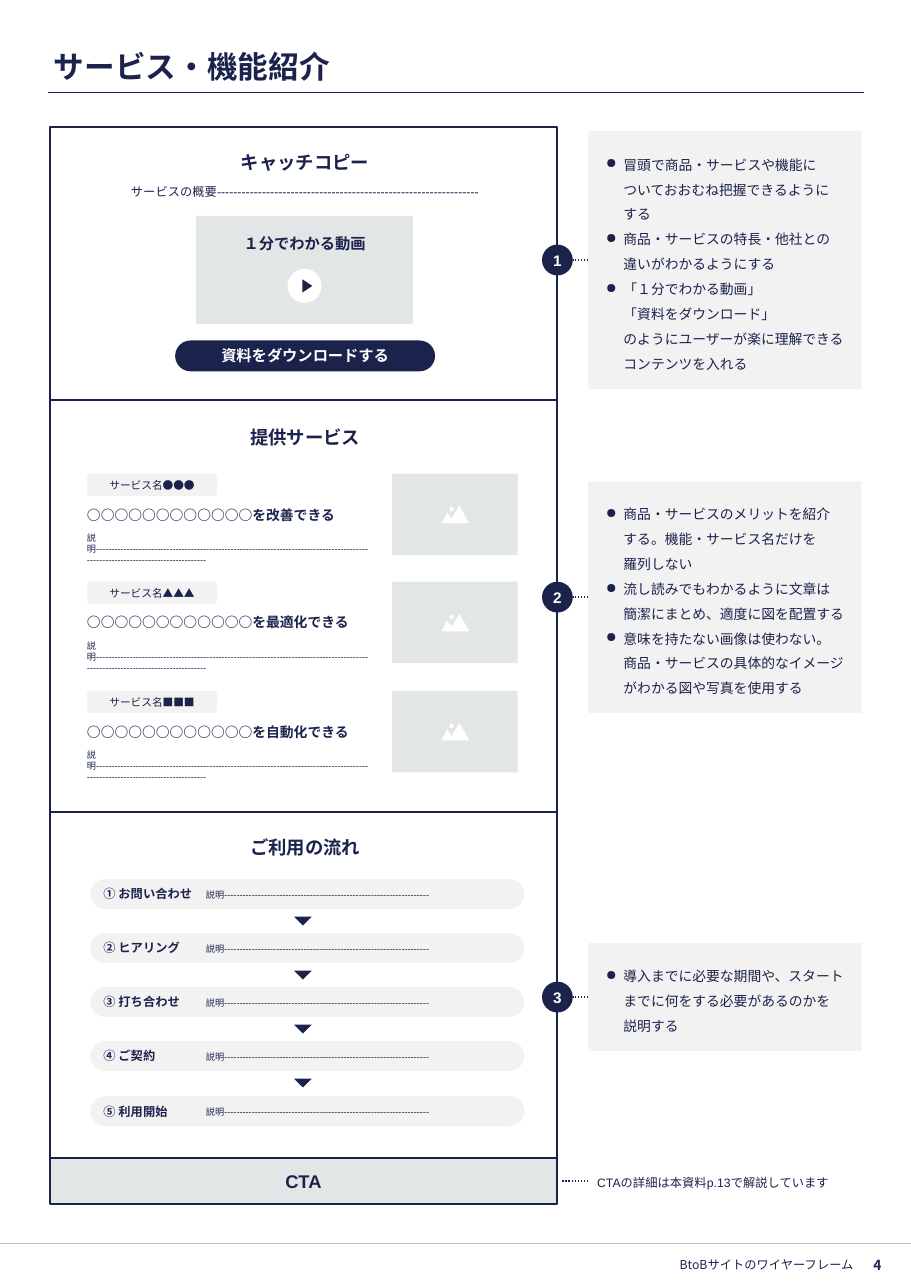
from copy import deepcopy

from lxml import etree
from pptx import Presentation
from pptx.dml.color import RGBColor
from pptx.enum.dml import MSO_LINE
from pptx.enum.shapes import MSO_CONNECTOR, MSO_SHAPE
from pptx.enum.text import MSO_ANCHOR, PP_ALIGN
from pptx.oxml.ns import qn
from pptx.util import Pt

RECT, PILL = MSO_SHAPE.RECTANGLE, MSO_SHAPE.ROUNDED_RECTANGLE
OVAL, TRIANGLE = MSO_SHAPE.OVAL, MSO_SHAPE.ISOSCELES_TRIANGLE
LEFT, CENTER, RIGHT = PP_ALIGN.LEFT, PP_ALIGN.CENTER, PP_ALIGN.RIGHT
TOP, MIDDLE = MSO_ANCHOR.TOP, MSO_ANCHOR.MIDDLE
STRAIGHT, DOTTED = MSO_CONNECTOR.STRAIGHT, MSO_LINE.ROUND_DOT

SCALE = 9144  # EMU per px, 100 px to the inch


class Theme:
    navy = RGBColor(0x1B, 0x22, 0x4C)
    white = RGBColor(0xFF, 0xFF, 0xFF)
    pale = RGBColor(0xF2, 0xF2, 0xF2)
    gray = RGBColor(0xE2, 0xE6, 0xE6)
    rule = RGBColor(0xBF, 0xBF, 0xBF)
    latin, japanese = "Arial", "Noto Sans CJK JP"
    title, heading, accent, body, small, label, detail = 20, 12, 10, 9, 8, 7, 6


presentation = Presentation()
presentation.slide_width, presentation.slide_height = 827 * SCALE, 1169 * SCALE
slide = presentation.slides.add_slide(presentation.slide_layouts[6])
shapes = slide.shapes


def add_box(kind, left, top, width, height, fill=None, outline=None):
    """Add a preset shape, or a text box when kind is None."""
    place = [length * SCALE for length in (left, top, width, height)]
    if kind is None:
        return shapes.add_textbox(*place)
    shape = shapes.add_shape(kind, *place)
    shape.shadow.inherit = False
    if fill is None:
        shape.fill.background()
    else:
        shape.fill.solid()
        shape.fill.fore_color.rgb = fill
    if outline is None:
        shape.line.fill.background()
    else:
        shape.line.color.rgb = outline
        shape.line.width = Pt(1.25)
    return shape


def write(shape, text, size, bold=False, color=Theme.navy, align=LEFT, anchor=MIDDLE,
          inset=(0, 0), latin=Theme.latin, bullets=False):
    """Fill the shape with text; inset is (sides, top and bottom)."""
    frame = shape.text_frame
    frame.text = text
    frame.word_wrap = True
    frame.vertical_anchor = anchor
    frame.margin_left = frame.margin_right = inset[0] * SCALE
    frame.margin_top = frame.margin_bottom = inset[1] * SCALE
    for paragraph in frame.paragraphs:
        paragraph.alignment = align
        if bullets:
            properties = paragraph._p.get_or_add_pPr()
            properties.set("marL", str(16 * SCALE))
            properties.set("indent", str(-16 * SCALE))
            bullet_color = etree.SubElement(properties, qn("a:buClr"))
            etree.SubElement(bullet_color, qn("a:srgbClr"), val=str(Theme.navy))
            etree.SubElement(properties, qn("a:buChar"), char="●")
            paragraph.line_spacing = 1.5
        for run in paragraph.runs:
            run.font.size = Pt(size)
            run.font.bold = bold
            run.font.color.rgb = color
            run.font.name = latin
            run_properties = run._r.get_or_add_rPr()
            etree.SubElement(run_properties, qn("a:ea"), typeface=Theme.japanese)
        for line_break in paragraph._p.findall(qn("a:br")):
            line_break.append(deepcopy(run_properties))


# Title and footer
write(add_box(None, 45, 39, 736, 42), "サービス・機能紹介", Theme.title, True, inset=(4, 4))
write(add_box(None, 500, 1138, 279, 20), "BtoBサイトのワイヤーフレーム", Theme.small,
      align=RIGHT, inset=(4, 4), latin=Theme.japanese)
write(add_box(None, 781, 1138, 31, 20), "4", Theme.body, True, align=CENTER,
      inset=(4, 4), latin=Theme.japanese)

# Page sections
sections = [(115, 248, 137, "キャッチコピー"), (363, 374, 387, "提供サービス"),
            (737, 314, 759, "ご利用の流れ")]
for top, height, heading_top, heading in sections:
    add_box(RECT, 45, top, 461, height, outline=Theme.navy)
    write(add_box(None, 80, heading_top, 394, 20), heading, Theme.heading, True,
          align=CENTER, anchor=TOP)
cta = add_box(RECT, 45, 1051, 461, 42, Theme.gray, Theme.navy)
write(cta, "CTA", Theme.heading, True, align=CENTER)

# Catch copy with video and download button
write(add_box(None, 80, 167, 394, 16), "サービスの概要" + "-" * 64, Theme.small,
      align=CENTER, anchor=TOP)
write(add_box(RECT, 178, 196, 197, 98, Theme.gray), "１分でわかる動画", Theme.accent, True,
      align=CENTER, anchor=TOP, inset=(16, 17))
add_box(OVAL, 261, 244, 31, 31, Theme.white)
add_box(TRIANGLE, 273, 255, 12, 9, Theme.navy).rotation = 90
button = add_box(PILL, 159, 309, 236, 28, Theme.navy)
button.adjustments[0] = 0.5
write(button, "資料をダウンロードする", Theme.accent, True, Theme.white, CENTER, inset=(0, 4))

# Offered services
services = [("●●●", "改善"), ("▲▲▲", "最適化"), ("■■■", "自動化")]
for index, (mark, benefit) in enumerate(services):
    top = 430 + 197 * index // 2
    write(add_box(PILL, 79, top, 118, 20, Theme.pale), "サービス名" + mark, Theme.label,
          align=CENTER, inset=(4, 4))
    write(add_box(None, 79, top + 29, 256, 16), "○" * 12 + f"を{benefit}できる",
          Theme.body, True)
    write(add_box(None, 79, top + 53, 256, 20), "説明" + "-" * 128, Theme.detail, anchor=TOP)
    add_box(RECT, 356, top, 114, 74, Theme.gray)
    add_box(OVAL, 408, top + 30, 4, 4, Theme.white)
    outline = shapes.build_freeform(417, top + 29, scale=SCALE)
    outline.add_line_segments([(426, top + 45), (401, top + 45), (406, top + 35),
                               (410, top + 41)])
    mountain = outline.convert_to_shape()
    mountain.shadow.inherit = False
    mountain.fill.solid()
    mountain.fill.fore_color.rgb = Theme.white
    mountain.line.fill.background()

# Steps of use
steps = ["① お問い合わせ", "② ヒアリング", "③ 打ち合わせ", "④ ご契約", "⑤ 利用開始"]
for index, step in enumerate(steps):
    top = 798 + 197 * index // 4
    bar = add_box(PILL, 82, top, 394, 27, Theme.pale)
    bar.adjustments[0] = 0.5
    write(bar, step, Theme.small, True, inset=(8, 4))
    write(add_box(None, 187, top + 8, 276, 12), "説明" + "-" * 67, Theme.detail)
    if index < len(steps) - 1:
        add_box(TRIANGLE, 267, top + 34, 16, 8, Theme.navy).rotation = 180

# Lines: start, end, colour, width, dash, object at the start
lines = [((44, 84), (784, 84), Theme.navy, 1, None, None),
         ((0, 1129), (827, 1129), Theme.rule, 0.5, None, None)]

# Numbered notes
notes = [
    (119, 234, "冒頭で商品・サービスや機能に\vついておおむね把握できるように\vする\n"
               "商品・サービスの特長・他社との\v違いがわかるようにする\n"
               "「１分でわかる動画」\v「資料をダウンロード」\v"
               "のようにユーザーが楽に理解できるコンテンツを入れる"),
    (437, 210, "商品・サービスのメリットを紹介\vする。機能・サービス名だけを\v羅列しない\n"
               "流し読みでもわかるように文章は\v簡潔にまとめ、適度に図を配置する\n"
               "意味を持たない画像は使わない。\v商品・サービスの具体的なイメージ\v"
               "がわかる図や写真を使用する"),
    (856, 98, "導入までに必要な期間や、スタート\vまでに何をする必要があるのかを\v説明する"),
]
for number, (top, height, text) in enumerate(notes, 1):
    middle = top + height // 2
    note = add_box(RECT, 534, top, 248, height, Theme.pale)
    write(note, text, Theme.body, inset=(16, 16), bullets=True)
    badge = add_box(OVAL, 492, middle - 14, 28, 28, Theme.navy)
    write(badge, str(number), Theme.accent, True, Theme.white, CENTER)
    lines.append(((534, middle), (520, middle), Theme.navy, 1, DOTTED, note))

cta_note = add_box(None, 534, 1063, 248, 18)
write(cta_note, "CTAの詳細は本資料p.13で解説しています", Theme.small, anchor=TOP, inset=(8, 4))
lines.append(((534, 1072), (510, 1072), Theme.navy, 1, DOTTED, cta_note))

for start, end, color, width, dash, source in lines:
    connector = shapes.add_connector(STRAIGHT, *[length * SCALE for length in start + end])
    connector.line.color.rgb = color
    connector.line.width = Pt(width)
    if dash is not None:
        connector.line.dash_style = dash
    if source is not None:
        connector.begin_connect(source, 1)
    etree.SubElement(connector._element.spPr, qn("a:effectLst"))

presentation.save("out.pptx")
